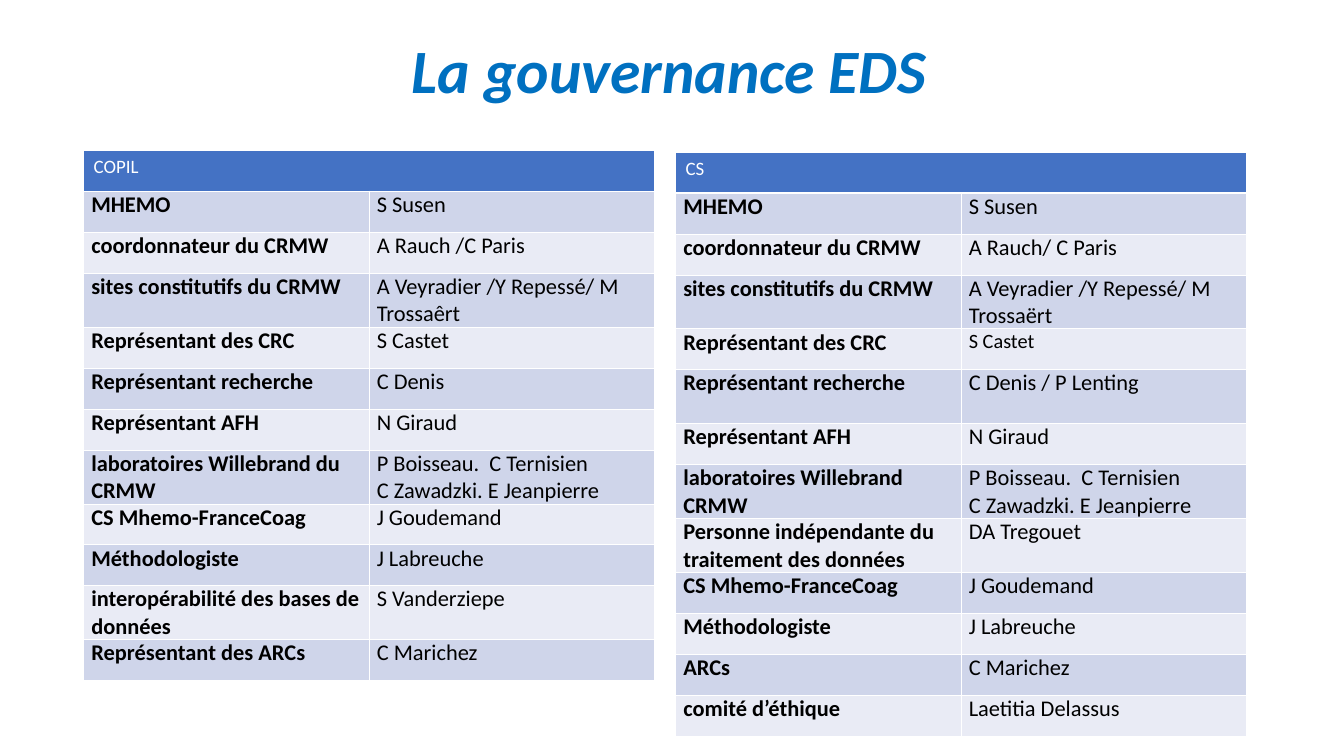
"""Build the governance slide with its two committee tables."""
from dataclasses import dataclass

from lxml.etree import SubElement
from pptx import Presentation
from pptx.dml.color import RGBColor
from pptx.enum.text import MSO_ANCHOR, PP_ALIGN
from pptx.oxml.ns import qn
from pptx.util import Cm, Pt


@dataclass(frozen=True)
class Theme:
    """Colours, font and type sizes of the slide."""

    font: str = "Calibri"
    title: str = "0070C0"
    head: str = "4472C4"
    bands: tuple = ("CFD5EA", "E9EBF5")
    ink: str = "000000"
    white: str = "FFFFFF"
    title_size: int = 88
    head_size: int = 27
    body_size: int = 32
    small_size: int = 29


def write(frame, text, size, color, font, bold=False, italic=False,
          align=PP_ALIGN.LEFT, spacing=1.0):
    """Write each line of the text as a formatted paragraph."""
    for n, line in enumerate(text.split("\n")):
        para = frame.add_paragraph() if n else frame.paragraphs[0]
        para.alignment = align
        para.line_spacing = spacing
        run = para.add_run()
        run.text = line
        run.font.name = font
        run.font.size = Pt(size)
        run.font.bold = bold
        run.font.italic = italic
        run.font.color.rgb = RGBColor.from_string(color)


class Deck:
    """Hold the theme and the current slide."""

    def __init__(self, theme, slide):
        """Keep the theme and the slide."""
        self.theme = theme
        self.slide = slide

    def title(self, text, left, top, width, height):
        """Add the centred slide title."""
        look = self.theme
        frame = self.slide.shapes.add_textbox(
            Cm(left), Cm(top), Cm(width), Cm(height)).text_frame
        frame.word_wrap = True
        frame.vertical_anchor = MSO_ANCHOR.MIDDLE
        write(frame, text, look.title_size, look.title, look.font,
              bold=True, italic=True, align=PP_ALIGN.CENTER, spacing=0.9)

    def edge(self, cell, base=1):
        """Draw the cell borders, with a chosen weight at the base."""
        props = cell._tc.get_or_add_tcPr()
        for side in "LRTB":
            weight = Pt(base if side == "B" else 1)
            line = SubElement(props, qn(f"a:ln{side}"), w=str(weight))
            fill = SubElement(line, qn("a:solidFill"))
            SubElement(fill, qn("a:srgbClr"), val=self.theme.white)

    def cell(self, cell, text, fill, size, color, bold=False,
             pad=(0.38, 0), base=1):
        """Fill, frame and write one table cell."""
        self.edge(cell, base)
        cell.fill.solid()
        cell.fill.fore_color.rgb = RGBColor.from_string(fill)
        cell.margin_left = cell.margin_right = Cm(pad[0])
        cell.margin_top = cell.margin_bottom = Cm(pad[1])
        cell.vertical_anchor = MSO_ANCHOR.TOP
        write(cell.text_frame, text, size, color, self.theme.font, bold=bold)

    def table(self, head, rows, tall, small, left, top, width=28.78):
        """Add a two-column table under a merged heading."""
        look = self.theme
        low, high = 2.06, 2.72
        sizes = [low] + [high if role in tall else low for role, _ in rows]
        grid = self.slide.shapes.add_table(
            len(sizes), 2, Cm(left), Cm(top), Cm(width), Cm(sum(sizes))).table
        grid.horz_banding = False
        for col in grid.columns:
            col.width = Cm(width / 2)
        for row, size in zip(grid.rows, sizes):
            row.height = Cm(size)
        grid.cell(0, 0).merge(grid.cell(0, 1))
        self.cell(grid.cell(0, 0), head, look.head, look.head_size,
                  look.white, pad=(0.5, 0.25), base=3)
        for n, (role, names) in enumerate(rows, 1):
            band = look.bands[(n - 1) % 2]
            size = look.small_size if role in small else look.body_size
            self.cell(grid.cell(n, 0), role, band, look.body_size,
                      look.ink, bold=True)
            self.cell(grid.cell(n, 1), names, band, size, look.ink)


LABS = "P Boisseau.  C Ternisien\nC Zawadzki. E Jeanpierre"
COPIL = [
    ("MHEMO", "S Susen"),
    ("coordonnateur du CRMW", "A Rauch /C Paris"),
    ("sites constitutifs du CRMW", "A Veyradier /Y Repessé/ M Trossaêrt"),
    ("Représentant des CRC", "S Castet"),
    ("Représentant recherche", "C Denis"),
    ("Représentant AFH", "N Giraud"),
    ("laboratoires Willebrand du CRMW", LABS),
    ("CS Mhemo-FranceCoag", "J Goudemand"),
    ("Méthodologiste", "J Labreuche"),
    ("interopérabilité des bases de données", "S Vanderziepe"),
    ("Représentant des ARCs", "C Marichez"),
]
COPIL_TALL = {
    "sites constitutifs du CRMW",
    "laboratoires Willebrand du CRMW",
    "interopérabilité des bases de données",
}
CS = [
    ("MHEMO", "S Susen"),
    ("coordonnateur du CRMW", "A Rauch/ C Paris"),
    ("sites constitutifs du CRMW", "A Veyradier /Y Repessé/ M Trossaërt"),
    ("Représentant des CRC", "S Castet"),
    ("Représentant recherche", "C Denis / P Lenting"),
    ("Représentant AFH", "N Giraud"),
    ("laboratoires Willebrand CRMW", LABS),
    ("Personne indépendante du traitement des données", "DA Tregouet"),
    ("CS Mhemo-FranceCoag", "J Goudemand"),
    ("Méthodologiste", "J Labreuche"),
    ("ARCs", "C Marichez"),
    ("comité d’éthique", "Laetitia Delassus"),
]
CS_TALL = {
    "sites constitutifs du CRMW",
    "Représentant recherche",
    "laboratoires Willebrand CRMW",
    "Personne indépendante du traitement des données",
}


def main():
    """Build and save the slide."""
    show = Presentation()
    show.slide_width, show.slide_height = Cm(67.74), Cm(38.1)
    deck = Deck(Theme(), show.slides.add_slide(show.slide_layouts[6]))
    deck.title("La gouvernance EDS", 4.52, 0, 58.42, 7.37)
    deck.table("COPIL", COPIL, COPIL_TALL, set(), 4.22, 7.59)
    deck.table("CS", CS, CS_TALL, {"Représentant des CRC"}, 34.06, 7.67)
    show.save("out.pptx")


if __name__ == "__main__":
    main()
